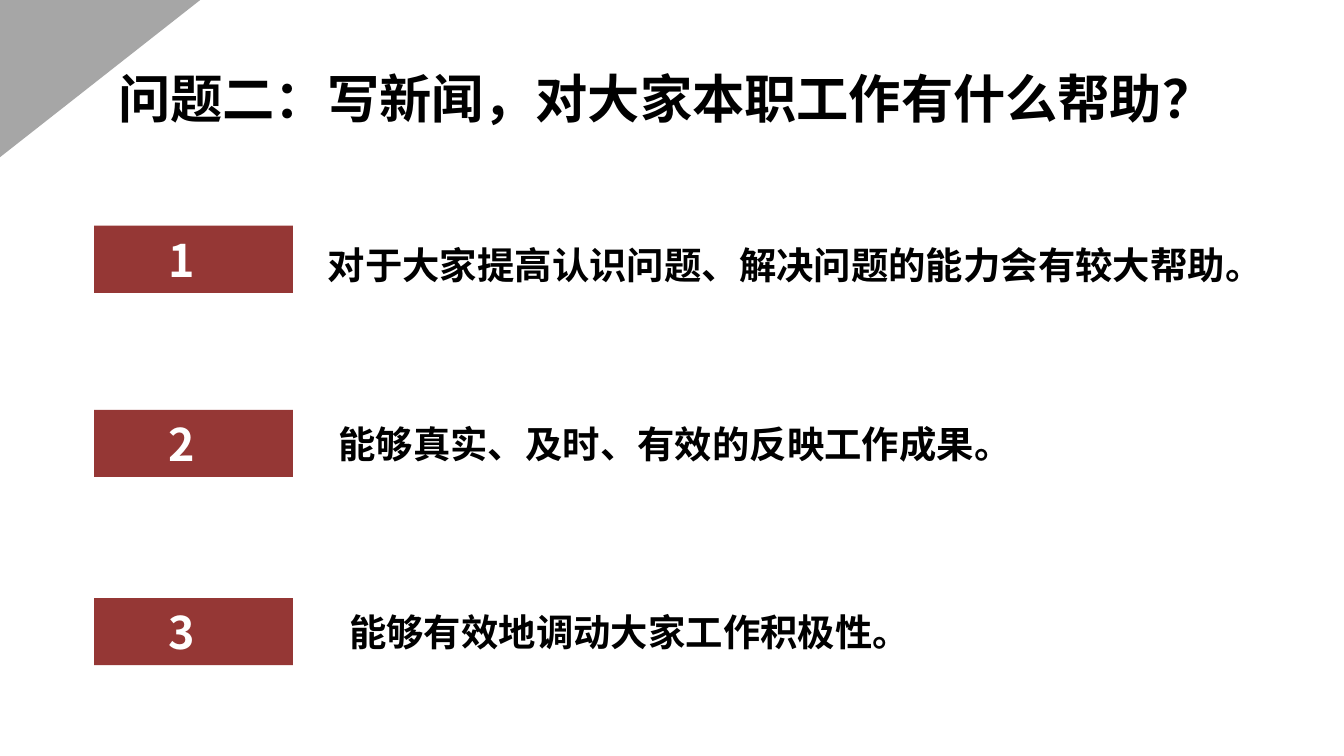
from pptx import Presentation
from pptx.dml.color import RGBColor
from pptx.enum.shapes import MSO_SHAPE
from pptx.enum.text import MSO_ANCHOR, MSO_AUTO_SIZE, PP_ALIGN
from pptx.oxml.ns import qn
from pptx.util import Inches, Pt
from lxml import etree

FONT = "Noto Sans CJK SC"
BLACK, WHITE, RED, GRAY = "000000", "FFFFFF", "953735", "A6A6A6"
TITLE = "问题二：写新闻，对大家本职工作有什么帮助？"
# Each row: bar top, text left, text top, sentence
ROWS = [
    (1.68, 2.34, 1.75, "对于大家提高认识问题、解决问题的能力会有较大帮助。"),
    (3.05, 2.42, 3.08, "能够真实、及时、有效的反映工作成果。"),
    (4.45, 2.5, 4.48, "能够有效地调动大家工作积极性。"),
]


def rgb(color):
    return RGBColor.from_string(color)


def write_text(shape, text, size, color):
    """Put one bold, left-aligned, vertically centred run into the shape."""
    frame = shape.text_frame
    frame.word_wrap = True
    frame.auto_size = MSO_AUTO_SIZE.NONE
    frame.vertical_anchor = MSO_ANCHOR.MIDDLE
    paragraph = frame.paragraphs[0]
    paragraph.alignment = PP_ALIGN.LEFT
    run = paragraph.add_run()
    run.text = text
    font = run.font
    font.name, font.size, font.bold = FONT, Pt(size), True
    font.color.rgb = rgb(color)
    latin = run._r.rPr.find(qn("a:latin"))
    east_asian = etree.Element(qn("a:ea"), typeface=FONT)
    latin.addnext(east_asian)


def add_filled_shape(slide, kind, left, top, width, height, color):
    shape = slide.shapes.add_shape(
        kind, Inches(left), Inches(top), Inches(width), Inches(height))
    shape.shadow.inherit = False
    shape.fill.solid()
    shape.fill.fore_color.rgb = rgb(color)
    shape.line.fill.background()
    return shape


def add_corner(slide):
    corner = add_filled_shape(
        slide, MSO_SHAPE.ISOSCELES_TRIANGLE, 0.16, -0.16, 1.17, 1.49, GRAY)
    corner.adjustments[0] = 0
    corner.rotation = 90


def add_title(slide):
    title = slide.shapes.title
    title.left, title.top = Inches(0.78), Inches(0.44)
    title.width, title.height = Inches(9.3), Inches(0.57)
    write_text(title, TITLE, 28, BLACK)
    # Bring the title in front of the corner
    slide.shapes._spTree.append(title._element)


def add_number_bar(slide, number, top):
    bar = add_filled_shape(slide, MSO_SHAPE.RECTANGLE, 0.7, top, 1.48, 0.5, RED)
    bar.text_frame.margin_left = Inches(0.55)
    write_text(bar, str(number), 24, WHITE)


def add_sentence(slide, left, top, sentence):
    box = slide.shapes.add_textbox(
        Inches(left), Inches(top), Inches(7.2), Inches(0.44))
    write_text(box, sentence, 20, BLACK)


def main():
    presentation = Presentation()
    presentation.slide_width = Inches(10)
    presentation.slide_height = Inches(10 * 9 / 16)
    slide = presentation.slides.add_slide(presentation.slide_layouts[5])
    add_corner(slide)
    add_title(slide)
    for number, (bar_top, left, top, sentence) in enumerate(ROWS, start=1):
        add_number_bar(slide, number, bar_top)
        add_sentence(slide, left, top, sentence)
    presentation.save("out.pptx")


if __name__ == "__main__":
    main()
